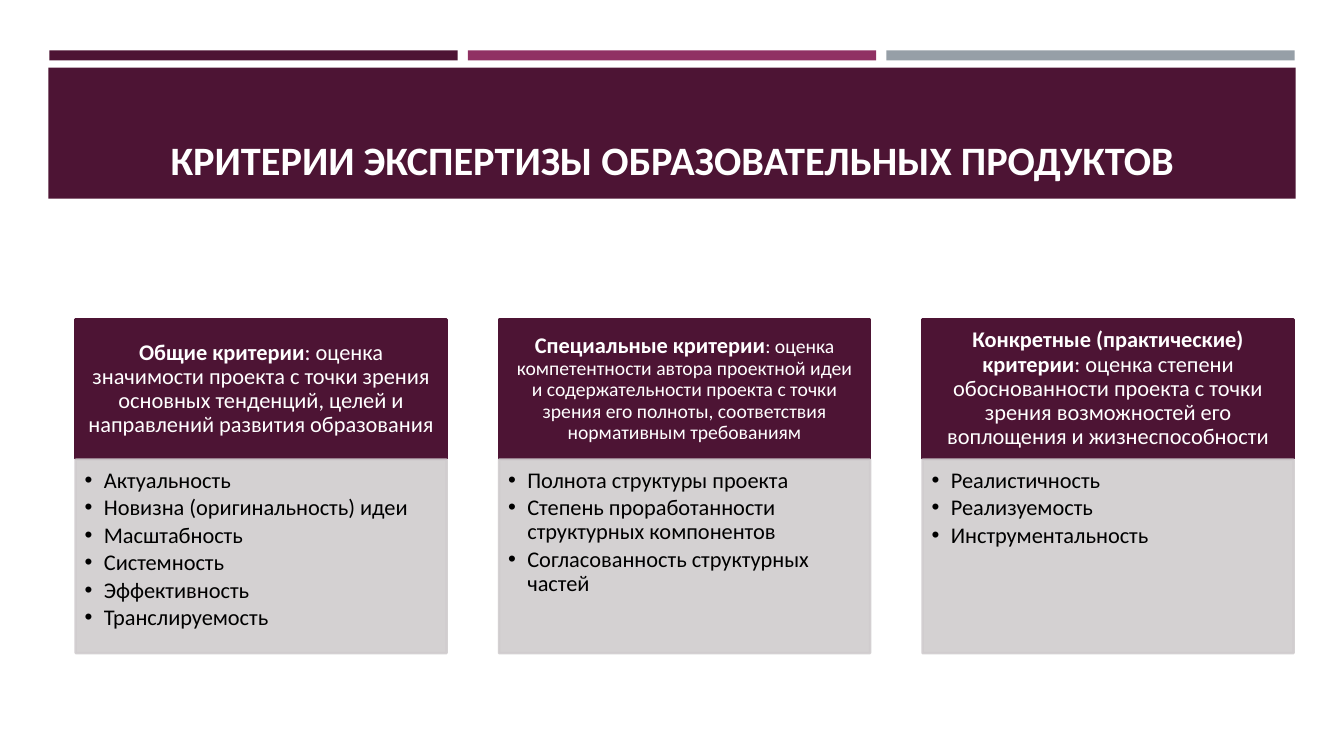
from lxml import etree
from pptx import Presentation
from pptx.dml.color import RGBColor
from pptx.enum import shapes, text
from pptx.oxml import ns
from pptx.util import Inches, Pt

FONT = "Calibri"
COLORS = {
    "plum": "4D1434",
    "magenta": "903163",
    "steel": "969FA7",
    "panel": "D0CCCE",
    "white": "FFFFFF",
    "black": "000000",
}
TITLE = "КРИТЕРИИ ЭКСПЕРТИЗЫ ОБРАЗОВАТЕЛЬНЫХ ПРОДУКТОВ"
STRIPES = ["plum", "magenta", "steel"]
CRITERIA = [
    {
        "name": "Общие критерии",
        "meaning": ": оценка значимости проекта с точки зрения основных тенденций, "
                   "целей и направлений развития образования",
        "size": 16,
        "items": ["Актуальность", "Новизна (оригинальность) идеи", "Масштабность",
                  "Системность", "Эффективность", "Транслируемость"],
    },
    {
        "name": "Специальные критерии",
        "meaning": ": оценка компетентности автора проектной идеи и содержательности "
                   "проекта с точки зрения его полноты, соответствия нормативным требованиям",
        "size": 14,
        "items": ["Полнота структуры проекта",
                  "Степень проработанности структурных компонентов",
                  "Согласованность структурных частей"],
    },
    {
        "name": "Конкретные (практические) критерии",
        "meaning": ": оценка степени обоснованности проекта с точки зрения "
                   "возможностей его воплощения и жизнеспособности",
        "size": 16,
        "items": ["Реалистичность", "Реализуемость", "Инструментальность"],
    },
]

STRIPE_LEFT, STRIPE_STEP, STRIPE_WIDTH = 0.49, 4.15, 4.05
COLUMN_LEFT, COLUMN_STEP, COLUMN_WIDTH = 0.75, 4.2, 3.68
HEADER_TOP, HEADER_HEIGHT = 3.17, 1.38
PANEL_TOP, PANEL_HEIGHT = 4.56, 1.92
INDENT = Inches(0.19)


def color(name):
    return RGBColor.from_string(COLORS[name])


def add_box(slide, left, top, width, height, fill, outlined=False):
    shape = slide.shapes.add_shape(
        shapes.MSO_SHAPE.RECTANGLE, *map(Inches, (left, top, width, height)))
    shape.shadow.inherit = False
    shape.fill.solid()
    shape.fill.fore_color.rgb = color(fill)
    if outlined:
        shape.line.color.rgb = color(fill)
        shape.line.width = Pt(1.75)
    else:
        shape.line.fill.background()
    return shape


def set_frame(shape, margins, anchor):
    frame = shape.text_frame
    frame.word_wrap = True
    frame.vertical_anchor = anchor
    (frame.margin_left, frame.margin_top,
     frame.margin_right, frame.margin_bottom) = map(Inches, margins)
    return frame


def add_run(paragraph, wording, size, ink, bold=False):
    run = paragraph.add_run()
    run.text = wording
    run.font.name = FONT
    run.font.size = Pt(size)
    run.font.bold = bold
    run.font.color.rgb = color(ink)


def make_translucent(shape):
    for element in shape._element.spPr.iter(ns.qn("a:srgbClr")):
        etree.SubElement(element, ns.qn("a:alpha"), val="90000")


def add_bullet(paragraph):
    properties = paragraph._p.get_or_add_pPr()
    properties.set("marL", str(INDENT))
    properties.set("indent", str(-INDENT))
    etree.SubElement(properties, ns.qn("a:buFont"), typeface="Arial")
    etree.SubElement(properties, ns.qn("a:buChar"), char="•")


def add_title(slide):
    add_box(slide, 0.48, 0.67, 12.37, 1.3, "plum")
    title = slide.shapes.add_textbox(*map(Inches, (0.64, 0.77, 12.06, 1.11)))
    frame = set_frame(title, (0.1, 0.05, 0.1, 0.05), text.MSO_ANCHOR.BOTTOM)
    paragraph = frame.paragraphs[0]
    paragraph.alignment = text.PP_ALIGN.CENTER
    paragraph.line_spacing = 0.9
    add_run(paragraph, TITLE, 28.8, "white", bold=True)


def add_header(slide, left, group):
    header = add_box(slide, left, HEADER_TOP, COLUMN_WIDTH, HEADER_HEIGHT, "plum", True)
    frame = set_frame(header, (0.12, 0.07, 0.12, 0.07), text.MSO_ANCHOR.MIDDLE)
    paragraph = frame.paragraphs[0]
    paragraph.alignment = text.PP_ALIGN.CENTER
    paragraph.line_spacing = 0.9
    add_run(paragraph, group["name"], 16, "white", bold=True)
    add_run(paragraph, group["meaning"], group["size"], "white")


def add_panel(slide, left, items):
    panel = add_box(slide, left, PANEL_TOP, COLUMN_WIDTH, PANEL_HEIGHT, "panel", True)
    make_translucent(panel)
    frame = set_frame(panel, (0.09, 0.09, 0.12, 0.14), text.MSO_ANCHOR.TOP)
    for index, item in enumerate(items):
        paragraph = frame.add_paragraph() if index else frame.paragraphs[0]
        paragraph.alignment = text.PP_ALIGN.LEFT
        paragraph.line_spacing = 0.9
        paragraph.space_after = Pt(2.4)
        add_bullet(paragraph)
        add_run(paragraph, item, 16, "black")


def main():
    presentation = Presentation()
    presentation.slide_width = Inches(13.33)
    presentation.slide_height = Inches(7.5)
    slide = presentation.slides.add_slide(presentation.slide_layouts[6])

    for index, fill in enumerate(STRIPES):
        add_box(slide, STRIPE_LEFT + index * STRIPE_STEP, 0.5, STRIPE_WIDTH, 0.1, fill)
    add_title(slide)
    for index, group in enumerate(CRITERIA):
        left = COLUMN_LEFT + index * COLUMN_STEP
        add_header(slide, left, group)
        add_panel(slide, left, group["items"])

    presentation.save("out.pptx")


if __name__ == "__main__":
    main()
